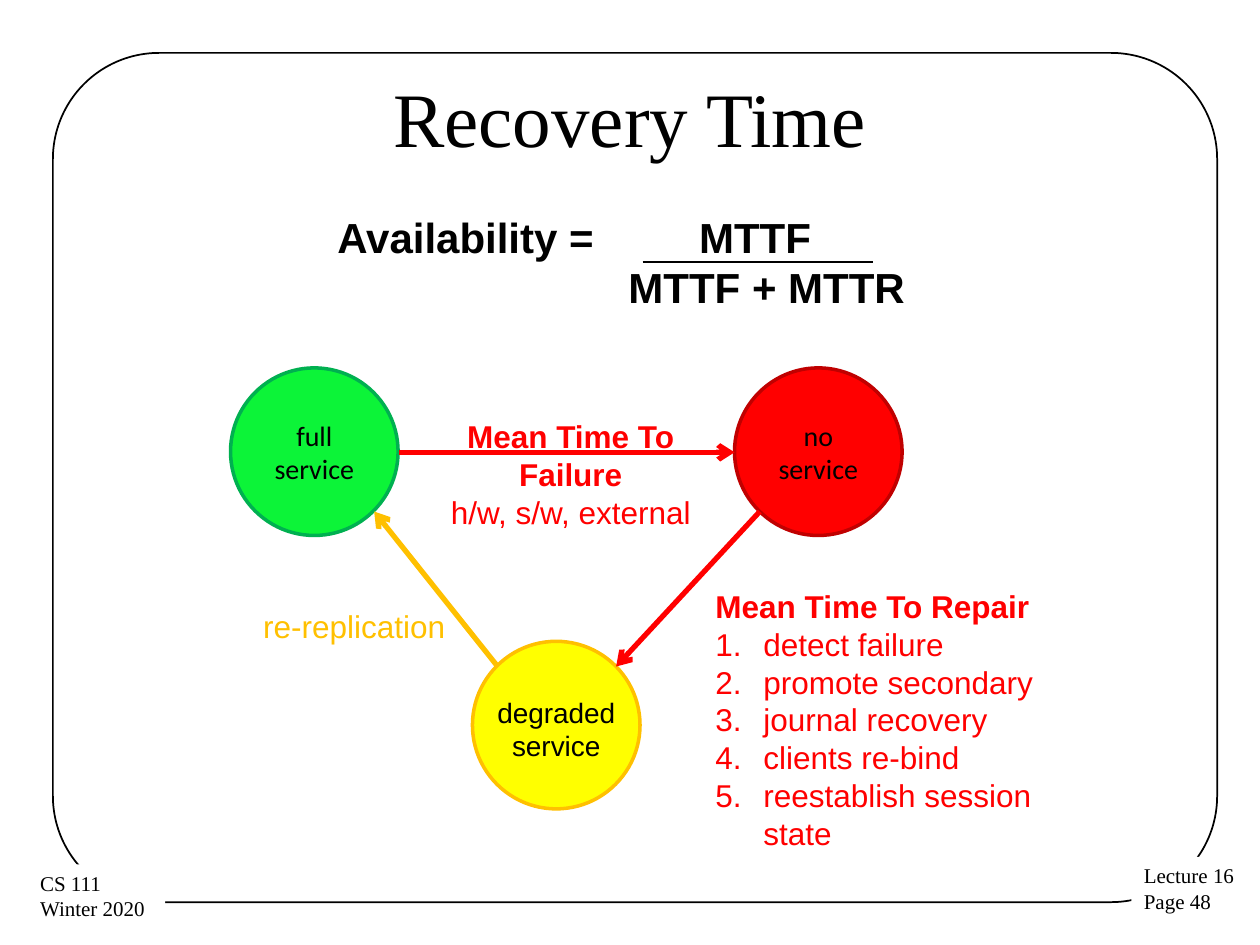
"""Build the Recovery Time slide with its availability formula and service-state cycle."""
from dataclasses import dataclass

from lxml.etree import SubElement
from pptx import Presentation
from pptx.dml.color import RGBColor
from pptx.enum.shapes import MSO_CONNECTOR as Link, MSO_SHAPE as Shape
from pptx.enum.text import MSO_ANCHOR as Anchor, MSO_AUTO_SIZE as AutoSize, PP_ALIGN as Align
from pptx.oxml.ns import qn
from pptx.util import Inches, Pt


@dataclass(frozen=True)
class Theme:
    """Colours, fonts and type sizes of the slide."""
    black: str = "000000"
    white: str = "FFFFFF"
    red: str = "FF0000"
    dark_red: str = "C00000"
    green: str = "0CF438"
    dark_green: str = "00B050"
    yellow: str = "FFFF00"
    amber: str = "FFC000"
    serif: str = "Times New Roman"
    sans: str = "Arial"
    state_font: str = "Calibri"
    title: int = 44
    formula: int = 24
    label: int = 18
    state: int = 16
    footer: int = 12


THEME = Theme()


@dataclass(frozen=True)
class Line:
    """One paragraph of text."""
    text: str
    bold: bool = False
    indent: float = 0
    hanging: float = 0
    numbered: bool = False
    tab: float = 0


@dataclass(frozen=True)
class Label:
    """A text box and its type style."""
    at: tuple[float, float, float, float]
    lines: tuple[Line, ...]
    size: int
    color: str = THEME.black
    font: str = THEME.sans
    align: Align = Align.LEFT
    wrap: bool = True
    fill: str | None = None


@dataclass(frozen=True)
class State:
    """A service state drawn as a circle."""
    left: float
    top: float
    fill: str
    outline: str
    text: str = ""


@dataclass(frozen=True)
class Stroke:
    """A straight line, with or without an arrowhead."""
    start: tuple[float, float]
    end: tuple[float, float]
    color: str
    width: float = 3
    arrow: bool = True


DIAMETER = 1.33
HANG = 0.38
STEPS = ("detect failure", "promote secondary", "journal recovery",
         "clients re-bind", "reestablish session state")

STATES = (
    State(1.83, 2.92, THEME.green, THEME.dark_green, "full service"),
    State(5.83, 2.92, THEME.red, THEME.dark_red, "no service"),
    State(3.75, 5.09, THEME.yellow, THEME.amber),
)
STROKES = (
    Stroke((3.17, 3.59), (5.83, 3.59), THEME.red),
    Stroke((6.03, 4.06), (4.89, 5.29), THEME.red),
    Stroke((3.95, 5.29), (2.97, 4.06), THEME.amber),
    Stroke((5.1, 2.08), (6.93, 2.08), THEME.black, 1.5, False),
)
LABELS = (
    Label((8.98, 6.8, 0.93, 0.51), (Line("Lecture 16"), Line("Page 48")),
          THEME.footer, font=THEME.serif, wrap=False, fill=THEME.white),
    Label((0.22, 6.86, 1.09, 0.51), (Line("CS 111"), Line("Winter 2020")),
          THEME.footer, font=THEME.serif, wrap=False, fill=THEME.white),
    Label((3.31, 3.26, 2.44, 1.01),
          (Line("Mean Time To Failure", bold=True), Line("h/w, s/w, external")),
          THEME.label, THEME.red, align=Align.CENTER),
    Label((5.58, 4.61, 3.09, 2.52),
          (Line("Mean Time To Repair", bold=True, indent=HANG, hanging=HANG),
           *(Line(step, indent=HANG, hanging=HANG, numbered=True) for step in STEPS)),
          THEME.label, THEME.red),
    Label((1.99, 4.77, 2.42, 0.4), (Line("re-replication", indent=HANG, hanging=HANG),),
          THEME.label, THEME.amber),
    Label((2.58, 1.63, 5.83, 0.91),
          (Line("Availability =\tMTTF", bold=True, tab=2.87),
           Line("MTTF + MTTR", bold=True, indent=2.31)),
          THEME.formula),
    Label((3.83, 5.47, 1.17, 0.64), (Line("degraded"), Line("service")),
          THEME.state, align=Align.CENTER),
)


def add_span(para, text: str, font: str, size: int, color: str, bold: bool = False) -> None:
    """Append one formatted run to a paragraph."""
    span = para.add_run()
    span.text = text
    span.font.name = font
    span.font.size = Pt(size)
    span.font.bold = bold
    span.font.color.rgb = RGBColor.from_string(color)


def format_line(para, line: Line) -> None:
    """Set the indent, numbering and tab stop of a paragraph."""
    props = para._p.get_or_add_pPr()
    if line.indent:
        props.set("marL", str(Inches(line.indent)))
        props.set("indent", str(-Inches(line.hanging)))
    if line.numbered:
        SubElement(props, qn("a:buFont"), typeface=THEME.sans)
        SubElement(props, qn("a:buAutoNum"), type="arabicPeriod")
    if line.tab:
        stops = SubElement(props, qn("a:tabLst"))
        SubElement(stops, qn("a:tab"), pos=str(Inches(line.tab)), algn="l")


def add_label(page, label: Label) -> None:
    """Draw a text box with its paragraphs."""
    box = page.shapes.add_textbox(*map(Inches, label.at))
    if label.fill:
        box.fill.solid()
        box.fill.fore_color.rgb = RGBColor.from_string(label.fill)
    frame = box.text_frame
    frame.word_wrap = label.wrap
    frame.auto_size = AutoSize.SHAPE_TO_FIT_TEXT
    for index, line in enumerate(label.lines):
        para = frame.add_paragraph() if index else frame.paragraphs[0]
        para.alignment = label.align
        format_line(para, line)
        add_span(para, line.text, label.font, label.size, label.color, line.bold)


def add_outline(page, kind: Shape, at: tuple[float, ...], color: str, width: float):
    """Draw an unfilled preset shape with a coloured outline."""
    shape = page.shapes.add_shape(kind, *map(Inches, at))
    shape.shadow.inherit = False
    shape.fill.background()
    shape.line.color.rgb = RGBColor.from_string(color)
    shape.line.width = Pt(width)
    return shape


def add_state(page, state: State) -> None:
    """Draw a state circle with its centred name."""
    circle = add_outline(page, Shape.OVAL, (state.left, state.top, DIAMETER, DIAMETER),
                         state.outline, 2)
    circle.fill.solid()
    circle.fill.fore_color.rgb = RGBColor.from_string(state.fill)
    if state.text:
        circle.text_frame.vertical_anchor = Anchor.MIDDLE
        para = circle.text_frame.paragraphs[0]
        para.alignment = Align.CENTER
        add_span(para, state.text, THEME.state_font, THEME.state, THEME.black)


def add_stroke(page, stroke: Stroke) -> None:
    """Draw a connector between two points."""
    link = page.shapes.add_connector(Link.STRAIGHT, *map(Inches, stroke.start + stroke.end))
    link.line.color.rgb = RGBColor.from_string(stroke.color)
    link.line.width = Pt(stroke.width)
    if stroke.arrow:
        SubElement(link.line._get_or_add_ln(), qn("a:tailEnd"), type="arrow")
    SubElement(link._element.spPr, qn("a:effectLst"))


def add_title(page, text: str) -> None:
    """Place and fill the title placeholder."""
    title = page.shapes.title
    title.left, title.top, title.width, title.height = map(Inches, (0.5, 0.3, 9, 1.25))
    title.text_frame.vertical_anchor = Anchor.MIDDLE
    para = title.text_frame.paragraphs[0]
    para.alignment = Align.CENTER
    add_span(para, text, THEME.serif, THEME.title, THEME.black)


def main() -> None:
    """Assemble and save the deck."""
    deck = Presentation()
    deck.slide_width, deck.slide_height = Inches(10), Inches(7.5)
    page = deck.slides.add_slide(deck.slide_layouts[5])
    add_title(page, "Recovery Time")
    border = add_outline(page, Shape.ROUNDED_RECTANGLE, (0.42, 0.42, 9.24, 6.74), THEME.black, 1)
    border.adjustments[0] = 0.125
    for state in STATES:
        add_state(page, state)
    for stroke in STROKES:
        add_stroke(page, stroke)
    for label in LABELS:
        add_label(page, label)
    deck.save("out.pptx")


if __name__ == "__main__":
    main()
